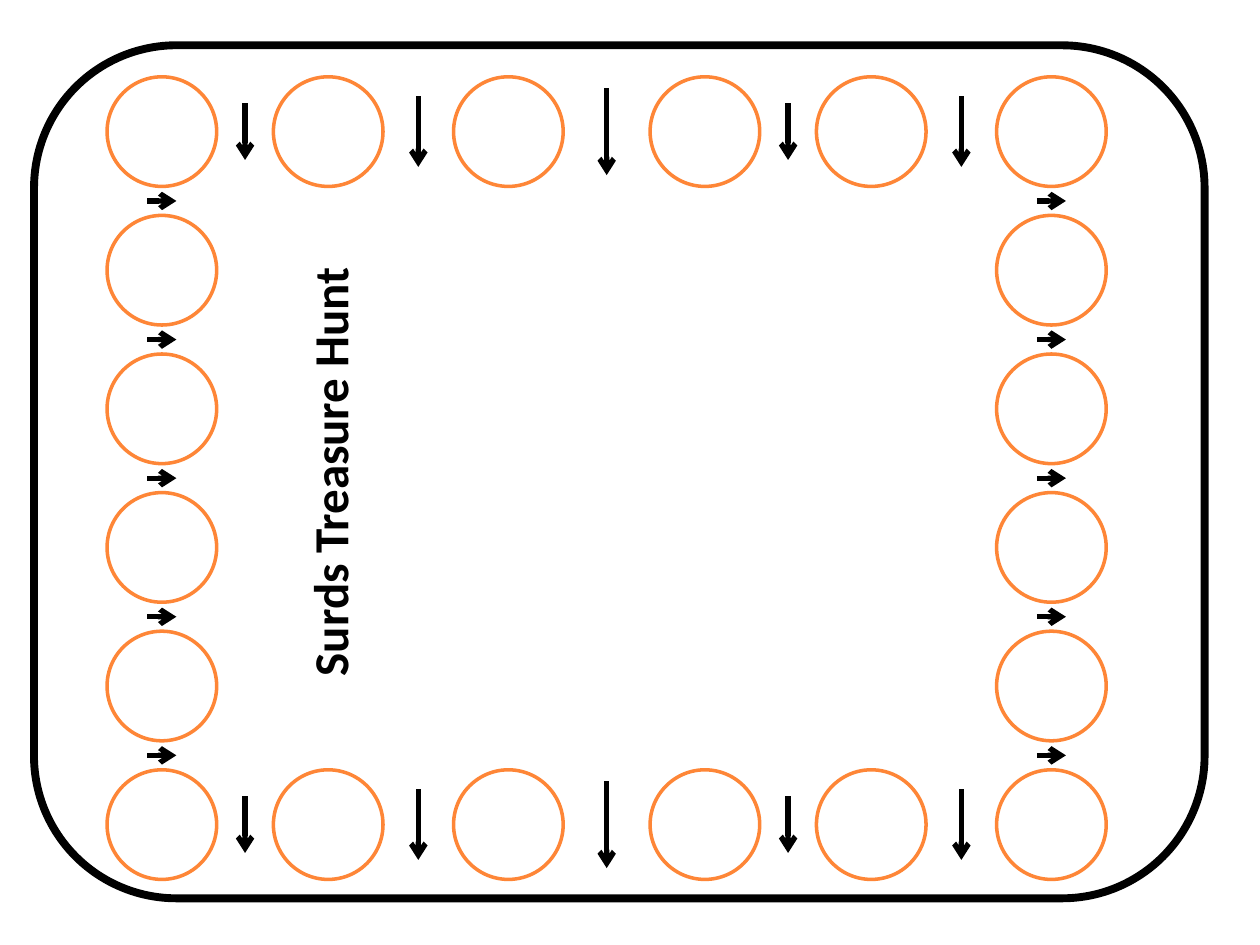
"""Build the Surds Treasure Hunt board: a ring of circles with arrows in the gaps."""
import itertools

import lxml.etree
import pptx
import pptx.dml.color
import pptx.enum.shapes
import pptx.enum.text
import pptx.oxml.ns
import pptx.util

Inches = pptx.util.Inches
Pt = pptx.util.Pt
Shape = pptx.enum.shapes.MSO_SHAPE
BLACK = pptx.dml.color.RGBColor(0x00, 0x00, 0x00)
WHITE = pptx.dml.color.RGBColor(0xFF, 0xFF, 0xFF)
ORANGE = pptx.dml.color.RGBColor(0xFE, 0x86, 0x37)

DIAMETER = 0.87
COLUMNS = [0.85, 2.17, 3.6, 5.16, 6.48, 7.91]
ROWS = [0.61 + 1.1 * row for row in range(6)]


def set_line(shape, color, width):
    """Colour the outline of a shape and set its width in points."""
    shape.line.color.rgb = color
    shape.line.width = Pt(width)


def add_border(page):
    """Draw the rounded frame of the board."""
    border = page.shapes.add_shape(
        Shape.ROUNDED_RECTANGLE, Inches(0.27), Inches(0.36), Inches(9.29), Inches(6.77))
    border.adjustments[0] = 0.167
    border.shadow.inherit = False
    border.fill.background()
    set_line(border, BLACK, 4.5)


def add_circle(page, left, top):
    """Draw one empty answer circle."""
    circle = page.shapes.add_shape(
        Shape.OVAL, Inches(left), Inches(top), Inches(DIAMETER), Inches(DIAMETER))
    circle.shadow.inherit = False
    circle.fill.solid()
    circle.fill.fore_color.rgb = WHITE
    set_line(circle, ORANGE, 2)


def add_arrow(page, start, end):
    """Draw a black arrow from start to end."""
    arrow = page.shapes.add_connector(
        pptx.enum.shapes.MSO_CONNECTOR.STRAIGHT, *map(Inches, start + end))
    set_line(arrow, BLACK, 3)
    qn = pptx.oxml.ns.qn
    lxml.etree.SubElement(arrow.line._get_or_add_ln(), qn("a:tailEnd"), type="arrow")
    lxml.etree.SubElement(arrow._element.spPr, qn("a:effectLst"))


def find_gaps(starts):
    """Return the middle and half the size of each gap between neighbouring circles."""
    return [((first + DIAMETER + second) / 2, (second - first - DIAMETER) / 2)
            for first, second in itertools.pairwise(starts)]


def add_arrows(page):
    """Draw in each gap an arrow across it, as long as the gap is wide."""
    for top, (x, half) in itertools.product((ROWS[0], ROWS[-1]), find_gaps(COLUMNS)):
        y = top + DIAMETER / 2
        add_arrow(page, (x, y - half), (x, y + half))
    for left, (y, half) in itertools.product((COLUMNS[0], COLUMNS[-1]), find_gaps(ROWS)):
        x = left + DIAMETER / 2
        add_arrow(page, (x - half, y), (x + half, y))


def set_title(page, text):
    """Write the title upwards along the left of the board."""
    title = page.shapes.title
    title.left, title.top = Inches(0.68), Inches(3.46)
    title.width, title.height = Inches(3.86), Inches(0.57)
    title.rotation = 270
    frame = title.text_frame
    frame.text = text
    frame.word_wrap = True
    frame.auto_size = pptx.enum.text.MSO_AUTO_SIZE.NONE
    frame.vertical_anchor = pptx.enum.text.MSO_ANCHOR.TOP
    para = frame.paragraphs[0]
    para.alignment = pptx.enum.text.PP_ALIGN.CENTER
    font = para.runs[0].font
    font.name = "Calibri"
    font.size = Pt(28)
    font.bold = True
    font.color.rgb = BLACK


def main():
    """Build and save the deck."""
    deck = pptx.Presentation()
    deck.slide_width, deck.slide_height = Inches(10), Inches(7.5)
    page = deck.slides.add_slide(deck.slide_layouts[5])
    set_title(page, "Surds Treasure Hunt")
    add_border(page)
    for left, top in itertools.product(COLUMNS, ROWS):
        if left in (COLUMNS[0], COLUMNS[-1]) or top in (ROWS[0], ROWS[-1]):
            add_circle(page, left, top)
    add_arrows(page)
    deck.save("out.pptx")


if __name__ == "__main__":
    main()
